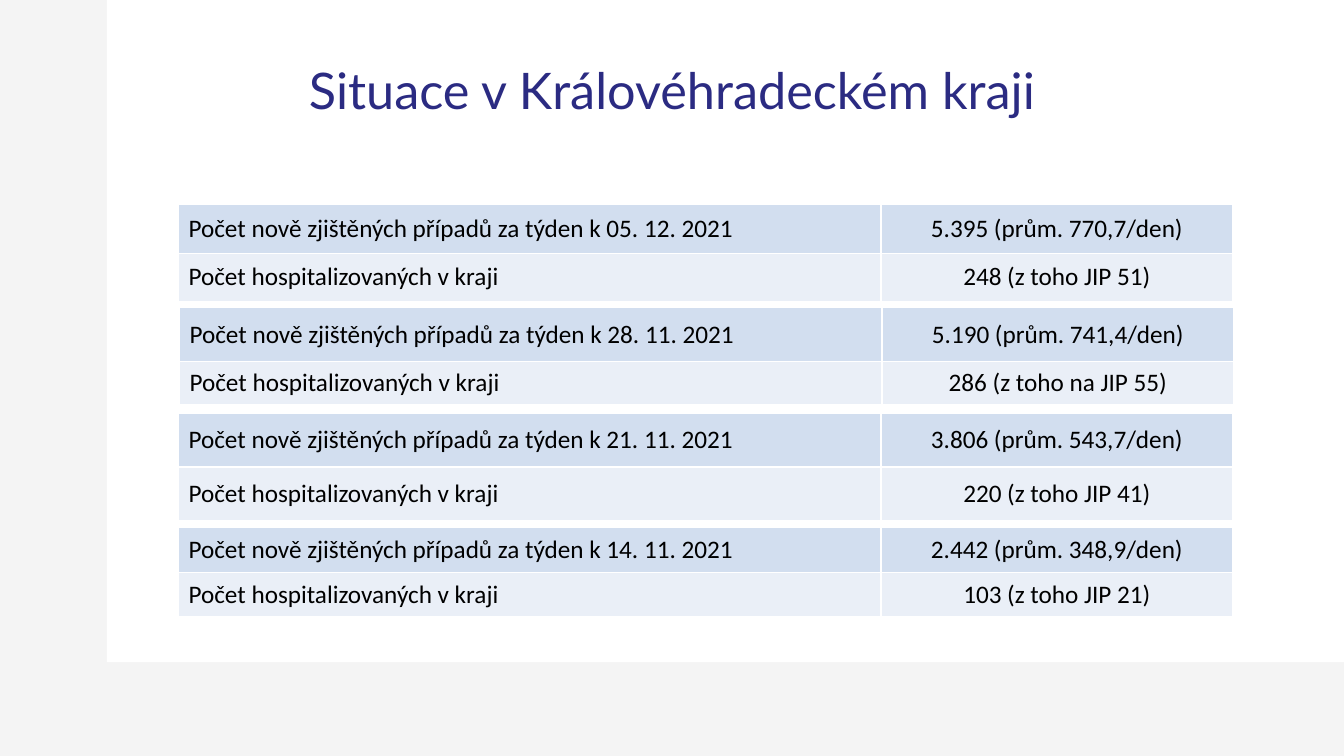
from lxml import etree
from pptx import Presentation
from pptx.dml.color import RGBColor
from pptx.enum.shapes import MSO_SHAPE
from pptx.enum.text import MSO_ANCHOR, PP_ALIGN
from pptx.oxml.ns import qn
from pptx.util import Pt

LEFT, CENTER = PP_ALIGN.LEFT, PP_ALIGN.CENTER
MIDDLE = MSO_ANCHOR.MIDDLE
RECTANGLE = MSO_SHAPE.RECTANGLE

COLORS = {
    "backdrop": "F4F4F4",
    "panel": "FFFFFF",
    "border": "FFFFFF",
    "title": "2B2B82",
    "text": "000000",
    "cases": "D2DEEF",
    "hospitalized": "EAEFF7",
}
COLUMN_WIDTHS = (501.8, 251.3)
LABELS = ("Počet nově zjištěných případů za týden k {}", "Počet hospitalizovaných v kraji")
ROW_FILLS = ("cases", "hospitalized")

# left, top, row heights, week ending, values
WEEKS = [
    (127.5, 146.3, (34.5, 34.5), "05. 12. 2021",
     ("5.395 (prům. 770,7/den)", "248 (z toho JIP 51)")),
    (128.2, 219.8, (38.2, 31), "28. 11. 2021",
     ("5.190 (prům. 741,4/den)", "286 (z toho na JIP 55)")),
    (127.5, 295.4, (38.2, 38.2), "21. 11. 2021",
     ("3.806 (prům. 543,7/den)", "220 (z toho JIP 41)")),
    (127.5, 376.8, (32, 32), "14. 11. 2021",
     ("2.442 (prům. 348,9/den)", "103 (z toho JIP 21)")),
]


def write(frame, text, font="Calibri", size=18, color="text", align=LEFT, spacing=1.0):
    para = frame.paragraphs[0]
    para.alignment = align
    para.line_spacing = spacing
    span = para.add_run()
    span.text = text
    span.font.name = font
    span.font.size = Pt(size)
    span.font.color.rgb = RGBColor.from_string(COLORS[color])


def add_borders(cell):
    properties = cell._tc.get_or_add_tcPr()
    for side in ("a:lnL", "a:lnR", "a:lnT", "a:lnB"):
        line = etree.SubElement(properties, qn(side), w=str(Pt(1)))
        fill = etree.SubElement(line, qn("a:solidFill"))
        etree.SubElement(fill, qn("a:srgbClr"), val=COLORS["border"])


deck = Presentation()
deck.slide_width, deck.slide_height = Pt(960), Pt(540)
page = deck.slides.add_slide(deck.slide_layouts[5])
page.background.fill.solid()
page.background.fill.fore_color.rgb = RGBColor.from_string(COLORS["backdrop"])

title = page.shapes.title
title.left, title.top, title.width, title.height = Pt(66), Pt(28.8), Pt(828), Pt(75.6)
title.text_frame.vertical_anchor = MIDDLE
write(title.text_frame, "Situace v Královéhradeckém kraji",
      font="Lato", size=36, color="title", align=CENTER, spacing=0.9)

panel = page.shapes.add_shape(RECTANGLE, Pt(76.4), Pt(0), Pt(883.6), Pt(473))
panel.shadow.inherit = False
panel.fill.solid()
panel.fill.fore_color.rgb = RGBColor.from_string(COLORS["panel"])
panel.line.fill.background()
title.element.addprevious(panel.element)

for left, top, heights, week, values in WEEKS:
    table = page.shapes.add_table(2, 2, Pt(left), Pt(top),
                                  Pt(sum(COLUMN_WIDTHS)), Pt(sum(heights))).table
    table.first_row = table.horz_banding = False
    for column, width in zip(table.columns, COLUMN_WIDTHS):
        column.width = Pt(width)
    for row, height in enumerate(heights):
        table.rows[row].height = Pt(height)
        texts = (LABELS[row].format(week), values[row])
        for column, (text, align) in enumerate(zip(texts, (LEFT, CENTER))):
            cell = table.cell(row, column)
            add_borders(cell)
            cell.fill.solid()
            cell.fill.fore_color.rgb = RGBColor.from_string(COLORS[ROW_FILLS[row]])
            cell.vertical_anchor = MIDDLE
            write(cell.text_frame, text, align=align)

deck.save("out.pptx")
